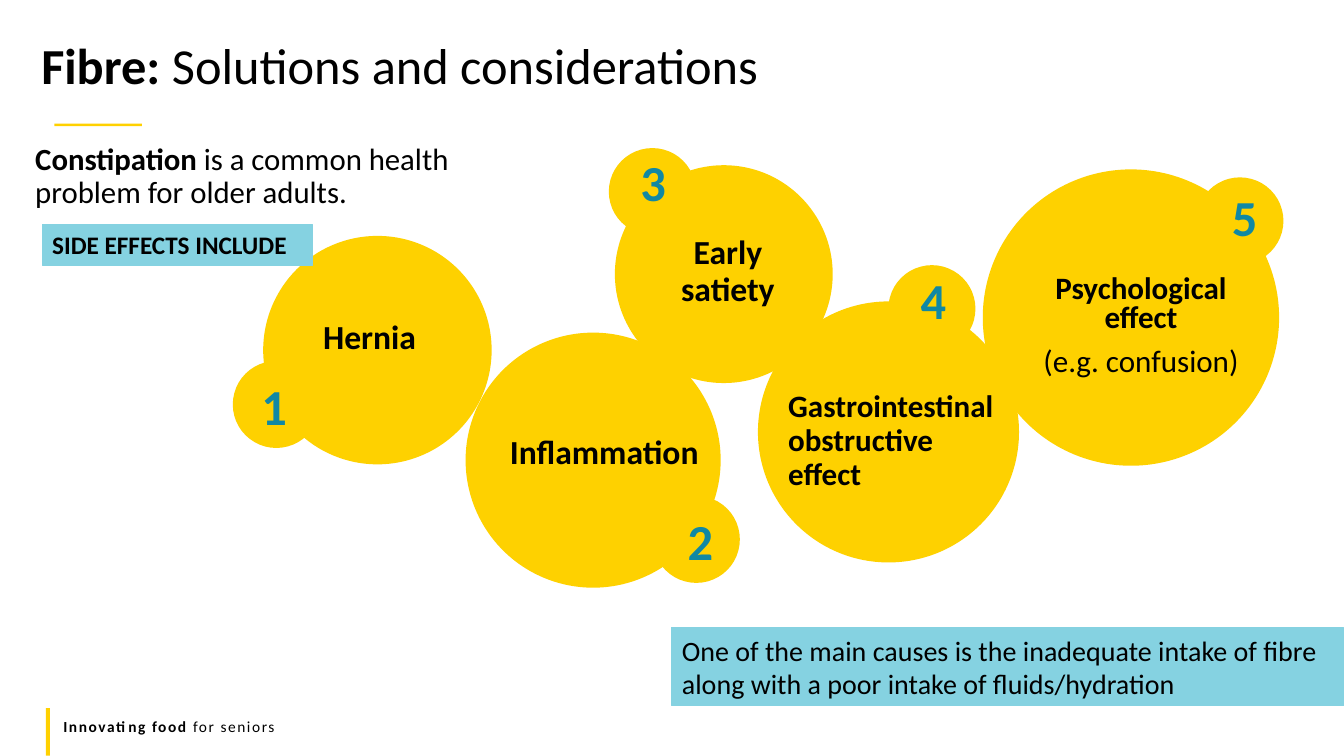
from pptx import Presentation
from pptx import util as u
from pptx.dml.color import RGBColor
from pptx.enum import shapes, text

COLOURS = {"yellow": "FED100", "rule": "FFD100", "blue": "85D2E1",
           "number": "1188A3", "black": "000000"}

presentation = Presentation()
presentation.slide_width, presentation.slide_height = u.Pt(960), u.Pt(540)
slide = presentation.slides.add_slide(presentation.slide_layouts[5])


def add_block(kind, place, colour, outlined=False):
    shape = slide.shapes.add_shape(kind, *[u.Pt(length) for length in place])
    shape.shadow.inherit = False
    shape.fill.solid()
    shape.fill.fore_color.rgb = RGBColor.from_string(COLOURS[colour])
    if outlined:
        shape.line.color.rgb = RGBColor.from_string(COLOURS[colour])
        shape.line.width = u.Pt(0.75)
    else:
        shape.line.fill.background()
    return shape


def write(shape, paragraphs, size, spacing=1.0, centred=False, indent=0,
          colour="black", anchor=text.MSO_ANCHOR.TOP):
    """Each paragraph is a list of (wording, bold) runs."""
    frame = shape.text_frame
    frame.word_wrap = True
    frame.auto_size = text.MSO_AUTO_SIZE.NONE
    frame.vertical_anchor = anchor
    frame.margin_left, frame.margin_right = u.Pt(7.2 + indent), u.Pt(7.2)
    frame.margin_top = frame.margin_bottom = u.Pt(3.6)
    for index, runs in enumerate(paragraphs):
        paragraph = frame.add_paragraph() if index else frame.paragraphs[0]
        paragraph.alignment = text.PP_ALIGN.CENTER if centred else text.PP_ALIGN.LEFT
        paragraph.line_spacing = spacing
        paragraph.space_before = u.Pt(10 if index else 0)
        for wording, bold in runs:
            run = paragraph.add_run()
            run.text = wording
            run.font.name = "Calibri"
            run.font.size = u.Pt(size)
            run.font.bold = bold
            run.font.color.rgb = RGBColor.from_string(COLOURS[colour])


# Title and the short rule below it
title = slide.shapes.title
title.left, title.top, title.width, title.height = u.Pt(22.3), u.Pt(28.8), u.Pt(844.6), u.Pt(46)
write(title, [[("Fibre: ", True), ("Solutions and considerations", False)]], 36, 0.8)
add_block(shapes.MSO_SHAPE.RECTANGLE, (38.9, 88.4, 62.6, 1.8), "rule")

# Introduction
introduction = slide.shapes.add_textbox(u.Pt(0), u.Pt(99.4), u.Pt(340), u.Pt(59))
write(introduction, [[("Constipation", True),
                      (" is a common health problem for older adults.", False)]],
      22, 0.9, indent=18)

# Side effects: circle (left, top, diameter), badge (left, top), number position,
# label box, label paragraphs, size, line spacing, centred, indent
BADGE = 62.2
side_effects = [
    ((188, 168.5, 163.2), (166.3, 257.8), (168.5, 269.3), (188.6, 225.4, 136.8, 54.7),
     [[("Hernia", True)]], 24, 0.9, True, 14),
    ((332.6, 237.6, 182.2), (466.3, 354.2), (473, 365.8), (354.2, 307.4, 154.8, 66.2),
     [[("Inflammation", True)]], 24, 0.9, True, 0),
    ((439.2, 118, 155.6), (434.9, 105.8), (439.2, 109.4), (443.5, 164.9, 136.8, 69.1),
     [[("Early satiety", True)]], 24, 0.9, True, 16),
    ((541.4, 215.3, 186.5), (634.6, 189.4), (639.4, 193.7), (537.8, 275.8, 187, 69.1),
     [[("Gastrointestinal obstructive effect", True)]], 22.2, 0.9, False, 18),
    ((702, 121, 211.7), (854.6, 126.7), (861.8, 134.6), (714.2, 193, 183.6, 87.8),
     [[("Psychological effect", True)], [("(e.g. confusion)", False)]], 22.2, 0.8, True, 18),
]
for number, (circle, badge, number_at, label_at, label, size, spacing,
             centred, indent) in enumerate(side_effects, 1):
    add_block(shapes.MSO_SHAPE.OVAL, (*circle, circle[2]), "yellow")
    add_block(shapes.MSO_SHAPE.OVAL, (*badge, BADGE, BADGE), "yellow")
    label_box = slide.shapes.add_textbox(*[u.Pt(length) for length in label_at])
    write(label_box, label, size, spacing, centred, indent)
    number_box = slide.shapes.add_textbox(*[u.Pt(length) for length in (*number_at, 54.7, 57.6)])
    write(number_box, [[(str(number), True)]], 36, 0.9, True, colour="number")

# Blue banners
banners = [
    ((30.2, 160.3, 193, 29.1), "SIDE EFFECTS INCLUDE", 18, True),
    ((480, 448.4, 480, 55.7), "One of the main causes is the inadequate intake of fibre "
     "along with a poor intake of fluids/hydration", 20, False),
]
for place, wording, size, bold in banners:
    banner = add_block(shapes.MSO_SHAPE.RECTANGLE, place, "blue", outlined=True)
    write(banner, [[(wording, bold)]], size, anchor=text.MSO_ANCHOR.MIDDLE)

# Footer with its upright bar and letter spacing
add_block(shapes.MSO_SHAPE.RECTANGLE, (32.8, 505.8, 2.9, 34), "rule")
footer = slide.shapes.add_textbox(u.Pt(38.2), u.Pt(509), u.Pt(864), u.Pt(20.9))
write(footer, [[("Innovating food ", True), ("for seniors", False)]], 11)
for run in footer.text_frame.paragraphs[0].runs:
    run.font._element.set("spc", "110")

presentation.save("out.pptx")
